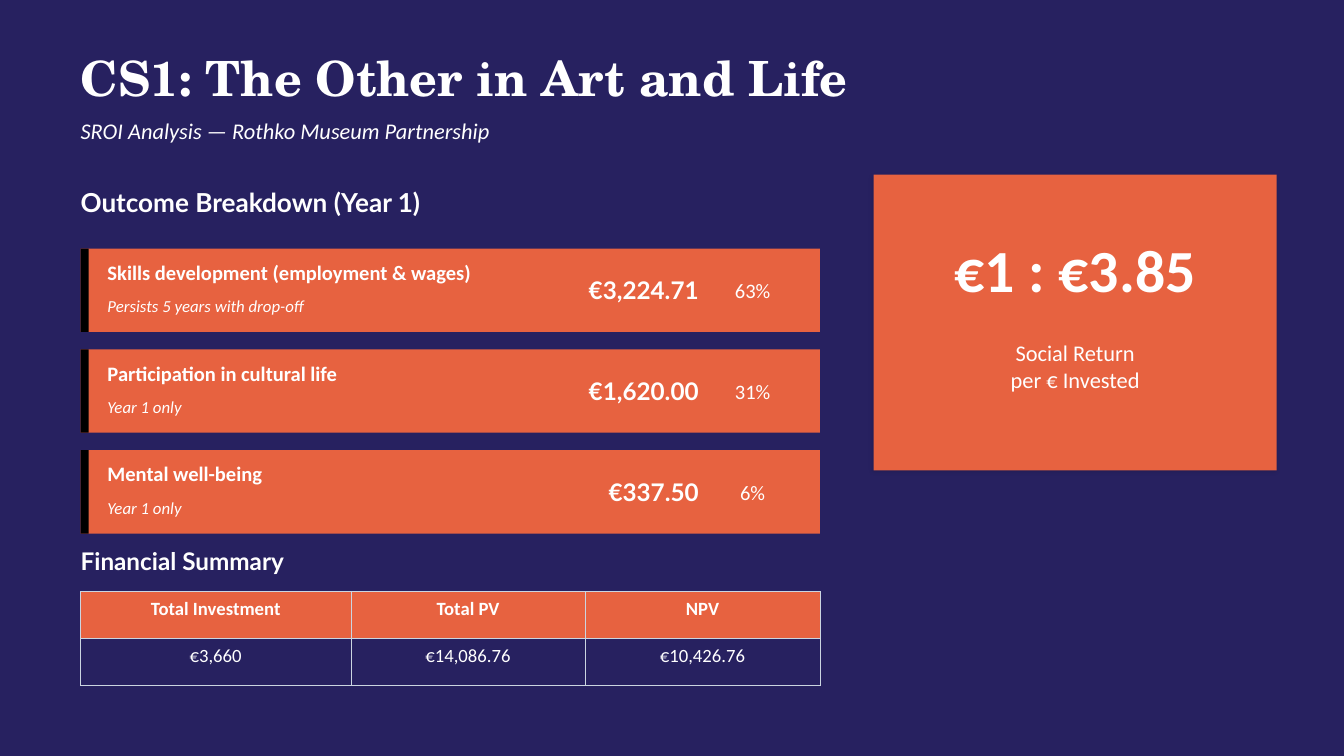
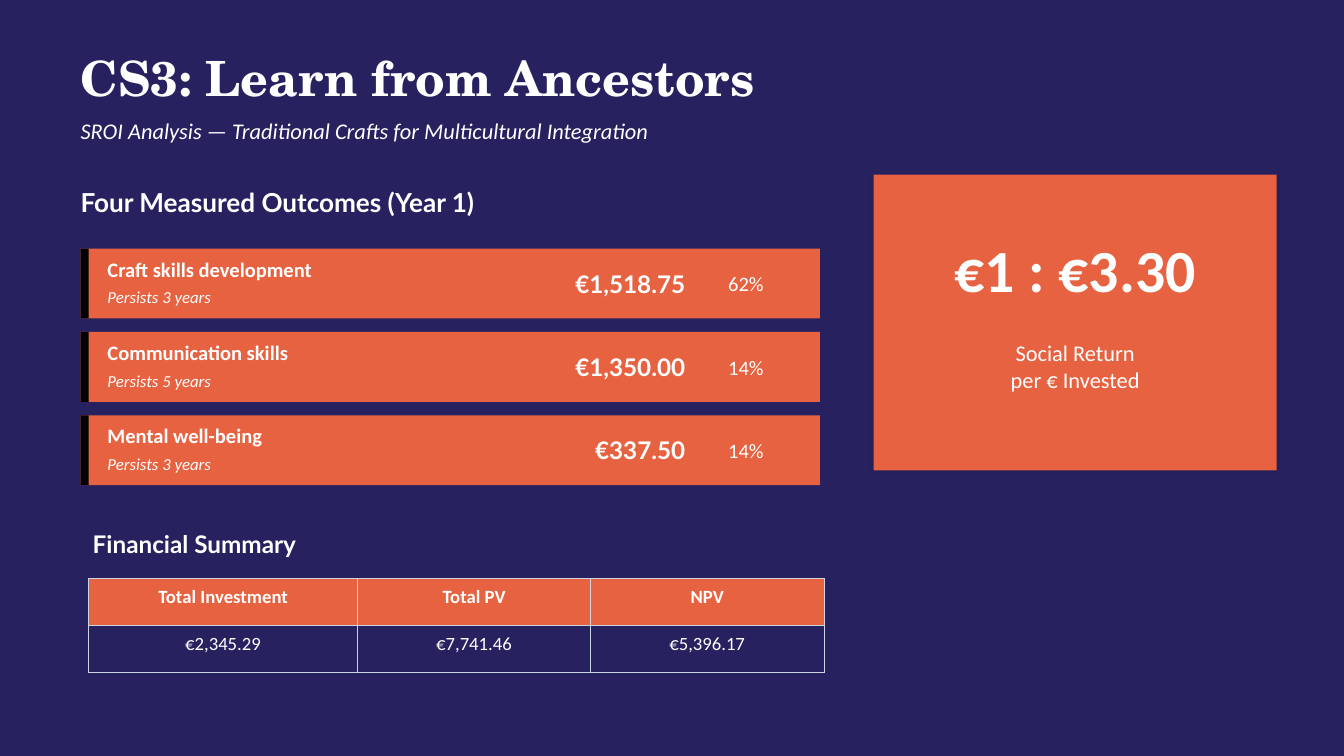
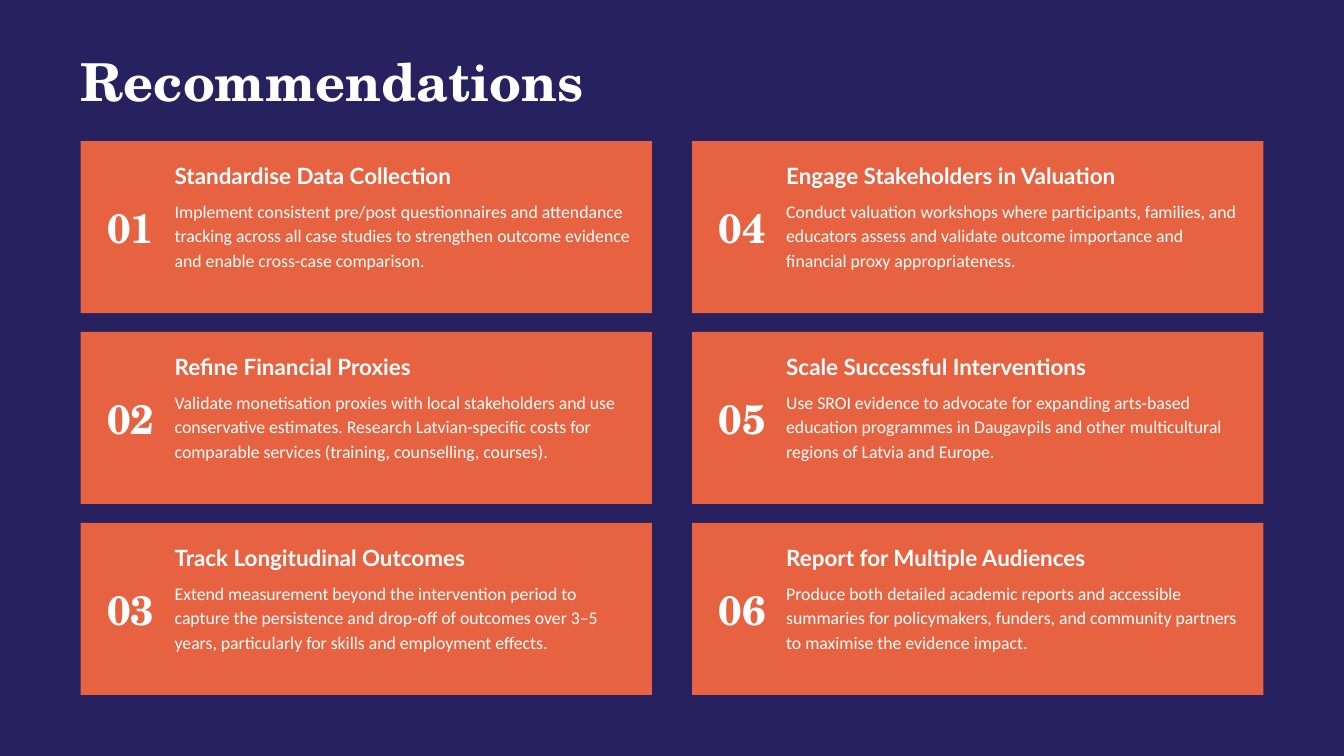
import pptx
import pptx.dml.color
import pptx.enum.shapes
import pptx.enum.text
import pptx.oxml
import pptx.oxml.ns
import pptx.util

PX = 9144  # 100 px to the inch
COLORS = {"navy": "272160", "orange": "E76240", "white": "FFFFFF",
          "black": "000000", "rule": "CBD5E1"}
SERIF, SANS, HEADING = "TeX Gyre Schola", "Calibri", "Lato"
ALIGN = pptx.enum.text.PP_ALIGN
ANCHOR = pptx.enum.text.MSO_ANCHOR
LEFT = 120

# Measures of the outcome rows and the summary on each case study
WIDE_ROWS = {"pitch": 150, "height": 124, "name_h": 70, "note_dy": 60, "note_h": 50,
             "text_w": 640, "value": (720, 320), "share": (1060, 120)}
TIGHT_ROWS = {"pitch": 124, "height": 104, "name_h": 60, "note_dy": 52, "note_h": 40,
              "text_w": 600, "value": (800, 220), "share": (1040, 140)}

CASES = [
    {"title": "CS1: The Other in Art and Life",
     "subtitle": "SROI Analysis — Rothko Museum Partnership",
     "ratio": "€1 : €3.85",
     "heading": "Outcome Breakdown (Year 1)",
     "rows": WIDE_ROWS,
     "outcomes": [
         ("Skills development (employment & wages)", "Persists 5 years with drop-off",
          "€3,224.71", "63%"),
         ("Participation in cultural life", "Year 1 only", "€1,620.00", "31%"),
         ("Mental well-being", "Year 1 only", "€337.50", "6%")],
     "summary_at": (120, 800), "table_at": (120, 880), "columns": (402, 349, 349),
     "totals": ("€3,660", "€14,086.76", "€10,426.76")},
    {"title": "CS3: Learn from Ancestors",
     "subtitle": "SROI Analysis — Traditional Crafts for Multicultural Integration",
     "ratio": "€1 : €3.30",
     "heading": "Four Measured Outcomes (Year 1)",
     "rows": TIGHT_ROWS,
     "outcomes": [
         ("Craft skills development", "Persists 3 years", "€1,518.75", "62%"),
         ("Communication skills", "Persists 5 years", "€1,350.00", "14%"),
         ("Mental well-being", "Persists 3 years", "€337.50", "14%")],
     "summary_at": (138, 774), "table_at": (132, 861), "columns": (400, 347, 347),
     "totals": ("€2,345.29", "€7,741.46", "€5,396.17")},
]

RECOMMENDATIONS = [
    ("Standardise Data Collection",
     "Implement consistent pre/post questionnaires and attendance tracking across all case "
     "studies to strengthen outcome evidence and enable cross-case comparison."),
    ("Refine Financial Proxies",
     "Validate monetisation proxies with local stakeholders and use conservative estimates. "
     "Research Latvian-specific costs for comparable services (training, counselling, courses)."),
    ("Track Longitudinal Outcomes",
     "Extend measurement beyond the intervention period to capture the persistence and drop-off "
     "of outcomes over 3–5 years, particularly for skills and employment effects."),
    ("Engage Stakeholders in Valuation",
     "Conduct valuation workshops where participants, families, and educators assess and "
     "validate outcome importance and financial proxy appropriateness."),
    ("Scale Successful Interventions",
     "Use SROI evidence to advocate for expanding arts-based education programmes in Daugavpils "
     "and other multicultural regions of Latvia and Europe."),
    ("Report for Multiple Audiences",
     "Produce both detailed academic reports and accessible summaries for policymakers, funders, "
     "and community partners to maximise the evidence impact."),
]


def rgb(name):
    return pptx.dml.color.RGBColor.from_string(COLORS[name])


def emu(*lengths):
    return [n * PX for n in lengths]


def write(tf, text, size=24, font=SANS, bold=False, italic=False, align=ALIGN.LEFT,
          spacing=None):
    """Fill a text frame, one paragraph per line."""
    for i, line in enumerate(text.split("\n")):
        p = tf.add_paragraph() if i else tf.paragraphs[0]
        p.alignment = align
        if spacing:
            p.line_spacing = spacing
        r = p.add_run()
        r.text = line
        r.font.name, r.font.size = font, pptx.util.Pt(size)
        r.font.bold, r.font.italic = bold, italic
        r.font.color.rgb = rgb("white")


def set_frame(tf, anchor, inset):
    tf.word_wrap = True
    tf.auto_size = pptx.enum.text.MSO_AUTO_SIZE.NONE
    tf.vertical_anchor = anchor
    if not inset:
        tf.margin_left = tf.margin_right = tf.margin_top = tf.margin_bottom = 0


def add_text(slide, box, text, anchor=ANCHOR.MIDDLE, inset=False, **fmt):
    tf = slide.shapes.add_textbox(*emu(*box)).text_frame
    set_frame(tf, anchor, inset)
    write(tf, text, **fmt)


def add_title(slide, text, height=110, size=52):
    sp = slide.shapes.title
    sp.left, sp.top, sp.width, sp.height = emu(LEFT, 60, 1800, height)
    set_frame(sp.text_frame, ANCHOR.MIDDLE, False)
    write(sp.text_frame, text, size=size, font=SERIF, bold=True)


def add_rect(slide, box, color="orange"):
    sp = slide.shapes.add_shape(pptx.enum.shapes.MSO_SHAPE.RECTANGLE, *emu(*box))
    sp.shadow.inherit = False
    sp.fill.solid()
    sp.fill.fore_color.rgb = rgb(color)
    sp.line.fill.background()
    return sp


def add_soft_shadow(sp):
    effects = sp._element.spPr.find(pptx.oxml.ns.qn("a:effectLst"))
    effects.append(pptx.oxml.parse_xml(
        f'<a:outerShdw {pptx.oxml.ns.nsdecls("a")} blurRad="50800" dist="25400" dir="8100000" '
        f'algn="bl" rotWithShape="0"><a:srgbClr val="{COLORS["black"]}">'
        '<a:alpha val="10000"/></a:srgbClr></a:outerShdw>'))


def add_ratio_card(slide, ratio):
    add_soft_shadow(add_rect(slide, (1300, 260, 600, 440)))
    add_text(slide, (1300, 280, 600, 240), ratio, inset=True, size=64, bold=True,
             align=ALIGN.CENTER)
    add_text(slide, (1300, 500, 600, 160), "Social Return\nper € Invested", inset=True,
             anchor=ANCHOR.TOP, align=ALIGN.CENTER)


def add_outcome(slide, top, rows, name, note, value, share):
    height = rows["height"]
    value_x, value_w = rows["value"]
    share_x, share_w = rows["share"]
    add_rect(slide, (LEFT, top, 1100, height))
    add_rect(slide, (LEFT, top, 12, height), "black")
    add_text(slide, (160, top, rows["text_w"], rows["name_h"]), name, size=22, bold=True)
    add_text(slide, (160, top + rows["note_dy"], rows["text_w"], rows["note_h"]), note,
             size=18, italic=True)
    add_text(slide, (value_x, top, value_w, height), value, size=26, font=HEADING,
             bold=True, align=ALIGN.RIGHT)
    add_text(slide, (share_x, top, share_w, height), share, inset=True, size=22,
             align=ALIGN.CENTER)


def add_borders(cell):
    tcPr = cell._tc.get_or_add_tcPr()
    for i, side in enumerate(("lnL", "lnR", "lnT", "lnB")):
        tcPr.insert(i, pptx.oxml.parse_xml(
            f'<a:{side} {pptx.oxml.ns.nsdecls("a")} w="6350"><a:solidFill>'
            f'<a:srgbClr val="{COLORS["rule"]}"/></a:solidFill></a:{side}>'))


def add_summary_table(slide, at, columns, totals):
    table = slide.shapes.add_table(2, 3, *emu(*at, sum(columns), 140)).table
    table.first_row = table.horz_banding = False
    for column, width in zip(table.columns, columns):
        column.width = width * PX
    for i, texts in enumerate((("Total Investment", "Total PV", "NPV"), totals)):
        for j, text in enumerate(texts):
            cell = table.cell(i, j)
            cell.margin_left = cell.margin_right = 20 * PX
            cell.margin_top = cell.margin_bottom = 10 * PX
            if i == 0:
                cell.fill.solid()
                cell.fill.fore_color.rgb = rgb("orange")
            else:
                cell.fill.background()
            add_borders(cell)
            write(cell.text_frame, text, size=20, bold=i == 0, align=ALIGN.CENTER)


def build_case(slide, case):
    add_title(slide, case["title"])
    add_text(slide, (LEFT, 160, 1200, 70), case["subtitle"], italic=True)
    add_ratio_card(slide, case["ratio"])
    add_text(slide, (LEFT, 260, 1100, 80), case["heading"], size=28, font=HEADING, bold=True)
    for i, outcome in enumerate(case["outcomes"]):
        add_outcome(slide, 370 + i * case["rows"]["pitch"], case["rows"], *outcome)
    add_text(slide, (*case["summary_at"], 1000, 70), "Financial Summary", size=26,
             font=HEADING, bold=True)
    add_summary_table(slide, case["table_at"], case["columns"], case["totals"])


def add_recommendation(slide, x, y, number, heading, body):
    add_rect(slide, (x, y, 850, 256))
    add_text(slide, (x + 20, y, 110, 256), f"{number:02d}", inset=True, size=44, font=SERIF,
             bold=True, align=ALIGN.CENTER)
    add_text(slide, (x + 140, y + 16, 680, 70), heading, font=HEADING, bold=True)
    add_text(slide, (x + 140, y + 84, 680, 160), body, anchor=ANCHOR.TOP, size=19,
             spacing=1.15)


def build_recommendations(slide):
    add_title(slide, "Recommendations", height=120, size=56)
    for i, (heading, body) in enumerate(RECOMMENDATIONS):
        column, row = divmod(i, 3)
        add_recommendation(slide, LEFT + column * 910, 210 + row * 284, i + 1, heading, body)


def main():
    prs = pptx.Presentation()
    prs.slide_width, prs.slide_height = emu(2000, 1125)
    background = prs.slide_master.background.fill
    background.solid()
    background.fore_color.rgb = rgb("navy")
    title_only = prs.slide_layouts[5]
    for case in CASES:
        build_case(prs.slides.add_slide(title_only), case)
    build_recommendations(prs.slides.add_slide(title_only))
    prs.save("out.pptx")


if __name__ == "__main__":
    main()
